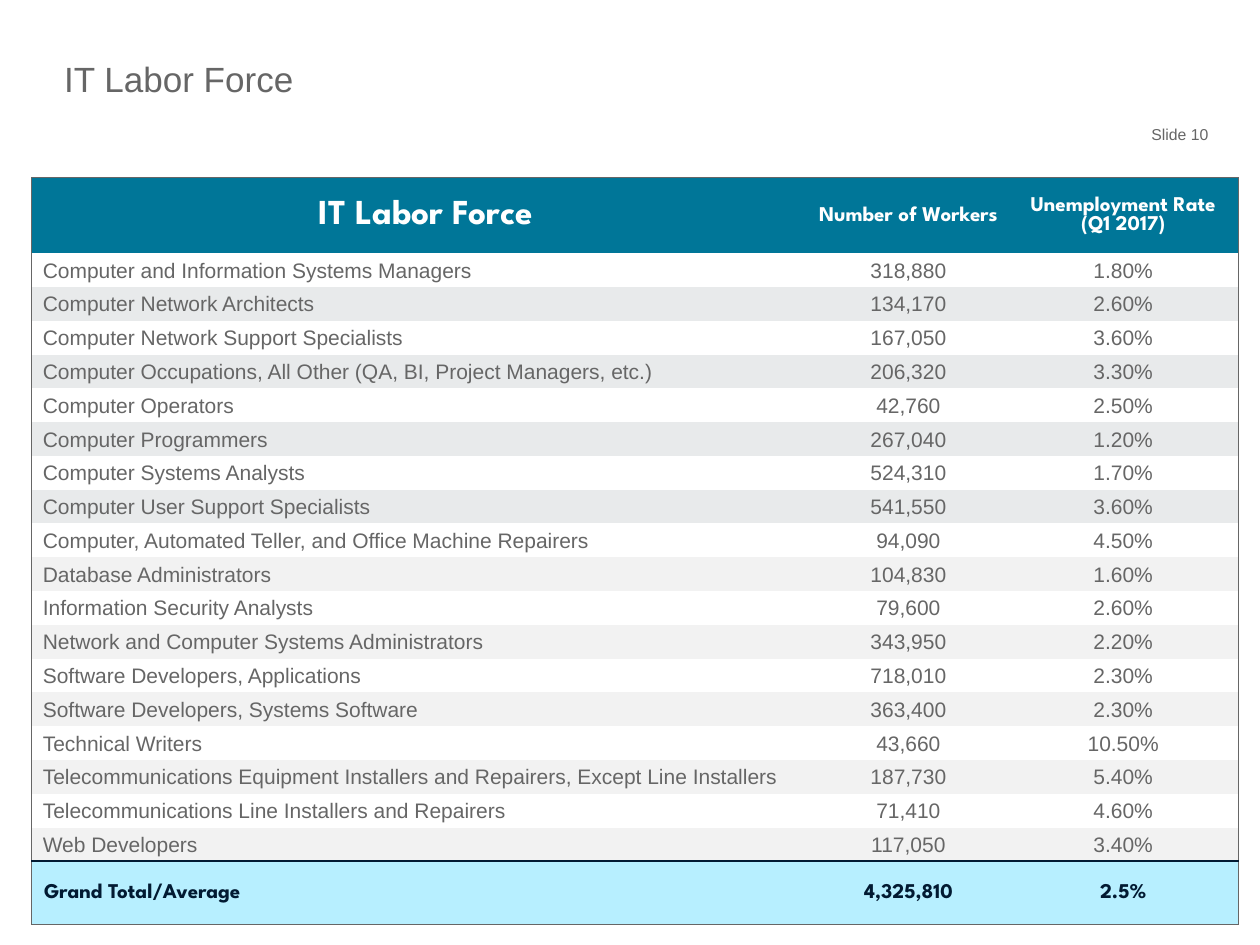
from lxml.etree import SubElement
from pptx import Presentation
from pptx.dml.color import RGBColor
from pptx.enum.text import MSO_ANCHOR as Anchor, PP_ALIGN as Align
from pptx.oxml.ns import qn
from pptx.util import Inches, Pt

GRAY = RGBColor(0x66, 0x66, 0x66)
WHITE = RGBColor(0xFF, 0xFF, 0xFF)
TEAL = RGBColor(0x00, 0x76, 0x98)
NAVY = RGBColor(0x02, 0x1A, 0x32)
PALE_BLUE = RGBColor(0xB7, 0xEF, 0xFF)
COOL_BAND = RGBColor(0xE8, 0xEA, 0xEB)
LIGHT_BAND = RGBColor(0xF2, 0xF2, 0xF2)

BODY_FONT = "Arial"
HEAD_FONT = "League Spartan"
NO_STYLE = "{2D5ABB26-0587-4C30-8999-92F81FD0307C}"
THIN = (GRAY, 0.25)
RULE = (NAVY, 1.5)

HEADER = ("IT Labor Force", "Number of Workers", "Unemployment Rate\v(Q1 2017)")
OCCUPATIONS = [
    ("Computer and Information Systems Managers", "318,880", "1.80%"),
    ("Computer Network Architects", "134,170", "2.60%"),
    ("Computer Network Support Specialists", "167,050", "3.60%"),
    ("Computer Occupations, All Other (QA, BI, Project Managers, etc.)", "206,320", "3.30%"),
    ("Computer Operators", "42,760", "2.50%"),
    ("Computer Programmers", "267,040", "1.20%"),
    ("Computer Systems Analysts", "524,310", "1.70%"),
    ("Computer User Support Specialists", "541,550", "3.60%"),
    ("Computer, Automated Teller, and Office Machine Repairers", "94,090", "4.50%"),
    ("Database Administrators", "104,830", "1.60%"),
    ("Information Security Analysts", "79,600", "2.60%"),
    ("Network and Computer Systems Administrators", "343,950", "2.20%"),
    ("Software Developers, Applications", "718,010", "2.30%"),
    ("Software Developers, Systems Software", "363,400", "2.30%"),
    ("Technical Writers", "43,660", "10.50%"),
    ("Telecommunications Equipment Installers and Repairers, Except Line Installers",
     "187,730", "5.40%"),
    ("Telecommunications Line Installers and Repairers", "71,410", "4.60%"),
    ("Web Developers", "117,050", "3.40%"),
]
TOTAL = ("Grand Total/Average", "4,325,810", "2.5%")


def style_paragraph(p, size, font, color, bold=False, align=Align.LEFT):
    p.alignment = align
    for target in (p, *p.runs):
        target.font.size = Pt(size)
        target.font.name = font
        target.font.bold = bold
        target.font.color.rgb = color


def add_label(slide, box, text, size, align=Align.LEFT):
    tf = slide.shapes.add_textbox(*map(Inches, box)).text_frame
    tf.word_wrap = True
    tf.vertical_anchor = Anchor.MIDDLE
    tf.margin_left = tf.margin_right = tf.margin_top = tf.margin_bottom = 0
    p = tf.paragraphs[0]
    p.text = text
    style_paragraph(p, size, BODY_FONT, GRAY, align=align)


def add_borders(cell, sides):
    tc_pr = cell._tc.get_or_add_tcPr()
    for side in "LRTB":
        if side in sides:
            color, width = sides[side]
            ln = SubElement(tc_pr, qn(f"a:ln{side}"), w=str(Pt(width)))
            fill = SubElement(ln, qn("a:solidFill"))
            SubElement(fill, qn("a:srgbClr"), val=str(color))


def fill_row(table, row, texts, fill, font, color, bold=False, sizes=(12, 12, 12),
             first_align=Align.LEFT, indent=0.1, edges=None):
    last = len(texts) - 1
    for col, (text, size) in enumerate(zip(texts, sizes)):
        cell = table.cell(row, col)
        cell.vertical_anchor = Anchor.MIDDLE
        cell.margin_left = Inches(0.01 if col else indent)
        cell.margin_right = cell.margin_top = Inches(0.01)
        cell.margin_bottom = 0
        p = cell.text_frame.paragraphs[0]
        p.text = text
        style_paragraph(p, size, font, color, bold, Align.CENTER if col else first_align)

        # Outer frame on the first and last columns, plus the row's own edges
        sides = dict(edges or {})
        if col == 0:
            sides["L"] = THIN
        if col == last:
            sides["R"] = THIN
        add_borders(cell, sides)
        if fill is None:
            cell.fill.background()
        else:
            cell.fill.solid()
            cell.fill.fore_color.rgb = fill


def add_labor_table(slide, box):
    n = len(OCCUPATIONS)
    frame = slide.shapes.add_table(n + 2, len(HEADER), *map(Inches, box))
    table = frame.table
    table._tbl.tblPr.find(qn("a:tableStyleId")).text = NO_STYLE
    table.horz_banding = False

    # Grid: occupation rows share the height left by header and total
    header_h, total_h = 0.6, 0.5
    row_h = (box[3] - header_h - total_h) / n
    for column, width in zip(table.columns, (6.17, 1.58, 1.83)):
        column.width = Inches(width)
    for row, height in zip(table.rows, [header_h] + [row_h] * n + [total_h]):
        row.height = Inches(height)

    # Header
    fill_row(table, 0, HEADER, TEAL, HEAD_FONT, WHITE, True, sizes=(20, 12, 12),
             first_align=Align.CENTER, edges={"T": THIN})

    # Occupations: every second row is banded, lighter from the tenth on
    for i, texts in enumerate(OCCUPATIONS, 1):
        band = COOL_BAND if i < 10 else LIGHT_BAND
        fill_row(table, i, texts, None if i % 2 else band, BODY_FONT, GRAY,
                 indent=0.09, edges={"B": RULE} if i == n else None)

    # Grand total
    fill_row(table, n + 1, TOTAL, PALE_BLUE, HEAD_FONT, NAVY, True,
             edges={"T": RULE, "B": THIN})


def main():
    prs = Presentation()
    prs.slide_width, prs.slide_height = Inches(10), Inches(7.5)
    slide = prs.slides.add_slide(prs.slide_layouts[6])
    add_label(slide, (7.22, 0.95, 2.37, 0.23), "Slide 10", 9, Align.RIGHT)
    add_label(slide, (0.51, 0, 6.85, 1.25), "IT Labor Force", 20)
    add_labor_table(slide, (0.25, 1.41, 9.58, 5.93))
    prs.save("out.pptx")


if __name__ == "__main__":
    main()
